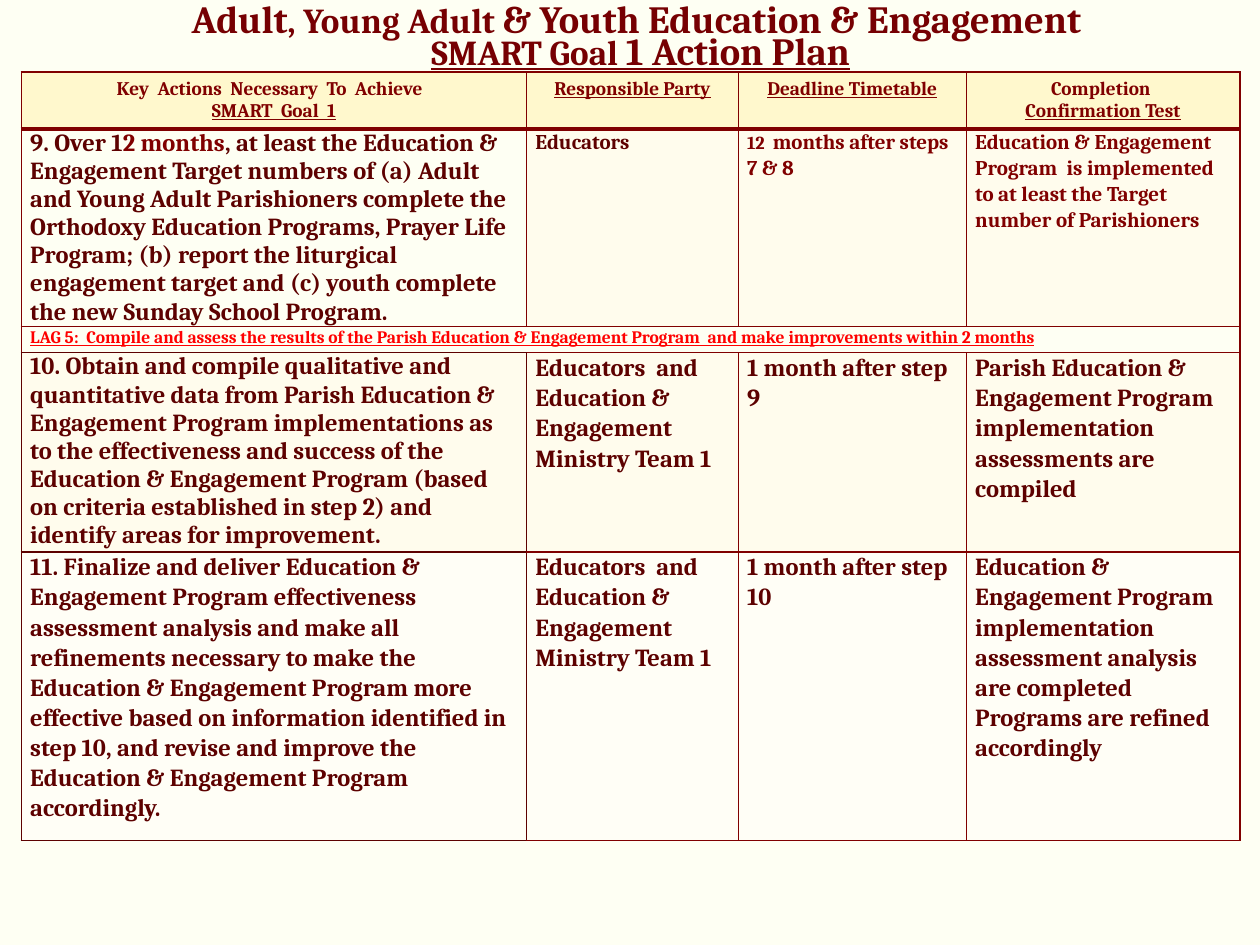
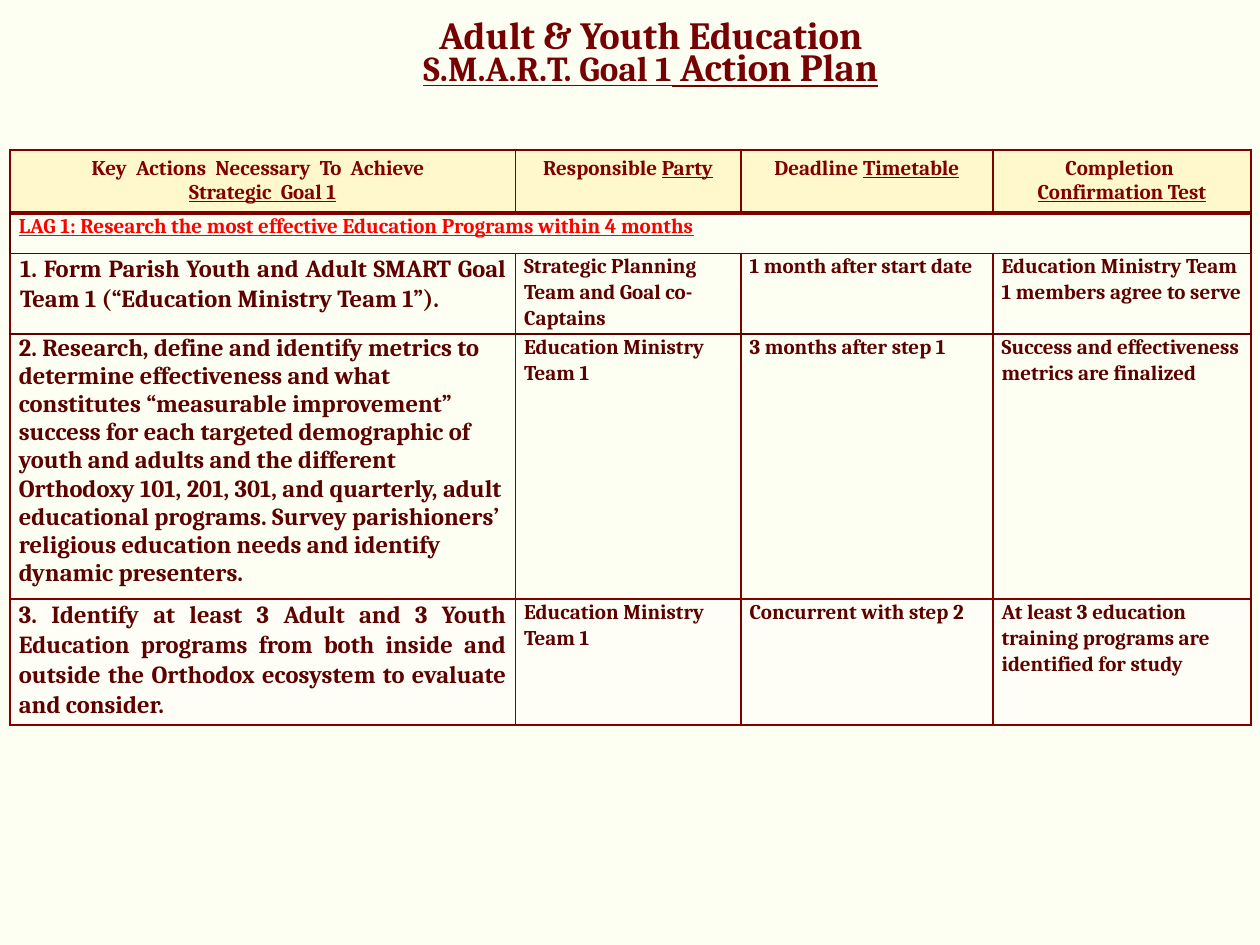
"""Build two SMART goal action plan slides with tables."""
from typing import NamedTuple

from pptx import Presentation
from pptx.dml.color import RGBColor
from pptx.enum.text import MSO_ANCHOR as Anchor, PP_ALIGN as Align
from pptx.oxml import parse_xml
from pptx.oxml.ns import nsdecls
from pptx.util import Inches, Pt

WIDTH, HEIGHT = Inches(10), Inches(7.5)
FONT = "Cambria"
IVORY = RGBColor(0xFE, 0xFF, 0xF3)
GOLD = RGBColor(0xFF, 0xF8, 0xCD)
CREAM = RGBColor(0xFF, 0xFC, 0xED)
PALE = RGBColor(0xFF, 0xFE, 0xF6)
MAROON = RGBColor(0x80, 0x00, 0x00)
DARK = RGBColor(0x5D, 0x01, 0x00)
WINE = RGBColor(0x76, 0x00, 0x02)
RED = RGBColor(0xFF, 0x00, 0x00)


class Run(NamedTuple):
    text: str
    size: float | None = None
    color: RGBColor | None = None
    underline: bool = False


class Cell(NamedTuple):
    paragraphs: list[str | list[Run]]
    size: float = 14
    color: RGBColor = DARK
    fill: RGBColor | None = None
    spacing: float | None = 1.07
    align: Align = Align.LEFT
    indent: float = 0
    padded: bool = False


class Row(NamedTuple):
    height: float
    cells: list[Cell]
    dark_edges: tuple[str, ...] = ("",) * 4
    bottom_width: float = 1


class Box(NamedTuple):
    left: float
    top: float
    width: float
    height: float


class Plan(NamedTuple):
    title_box: Box
    title: list[list[Run]]
    table_box: Box
    columns: list[float]
    rows: list[Row]


def across(percent: float) -> int:
    """Turn a percentage of the slide width into a length."""
    return round(WIDTH * percent / 100)


def down(percent: float) -> int:
    """Turn a percentage of the slide height into a length."""
    return round(HEIGHT * percent / 100)


def place(box: Box) -> tuple[int, int, int, int]:
    """Turn a box of percentages into lengths."""
    return across(box.left), down(box.top), across(box.width), down(box.height)


def marked(text: str) -> list[Run]:
    """Split text into runs, underlining what stands between underscores."""
    return [Run(part, underline=i % 2 == 1)
            for i, part in enumerate(text.split("_")) if part]


def style(p, size: float, color: RGBColor, align: Align, spacing: float | None) -> None:
    """Set the shared look of a paragraph."""
    p.alignment = align
    if spacing:
        p.line_spacing = spacing
    p.font.name, p.font.bold, p.font.size = FONT, True, Pt(size)
    p.font.color.rgb = color


def add_runs(p, runs: list[Run]) -> None:
    """Add runs with the settings that differ from the paragraph."""
    for run in runs:
        r = p.add_run()
        r.text = run.text
        if run.size:
            r.font.size = Pt(run.size)
        if run.color:
            r.font.color.rgb = run.color
        if run.underline:
            r.font.underline = True


def set_borders(cell, dark_edges: str, bottom_width: float) -> None:
    """Draw the four edges of a table cell."""
    tc_pr = cell._tc.get_or_add_tcPr()
    for i, edge in enumerate("LRTB"):
        width = Pt(bottom_width if edge == "B" else 1)
        color = DARK if edge in dark_edges else MAROON
        tc_pr.insert(i, parse_xml(
            f'<a:ln{edge} {nsdecls("a")} w="{width}"><a:solidFill>'
            f'<a:srgbClr val="{color}"/></a:solidFill></a:ln{edge}>'))


def fill_cell(cell, content: Cell) -> None:
    """Write and colour one table cell."""
    if not content.padded:
        cell.margin_left = Inches(0.07 + content.indent)
        cell.margin_right = Inches(0.07)
        cell.margin_top = cell.margin_bottom = 0
    if content.fill:
        cell.fill.solid()
        cell.fill.fore_color.rgb = content.fill
    else:
        cell.fill.background()
    tf = cell.text_frame
    for i, text in enumerate(content.paragraphs):
        p = tf.add_paragraph() if i else tf.paragraphs[0]
        style(p, content.size, content.color, content.align, content.spacing)
        add_runs(p, marked(text) if isinstance(text, str) else text)


def add_plan_table(s, plan: Plan) -> None:
    """Draw the action table; a row with one cell spans all columns."""
    frame = s.shapes.add_table(len(plan.rows), len(plan.columns), *place(plan.table_box))
    table = frame.table
    table.first_row = table.horz_banding = False
    for column, width in zip(table.columns, plan.columns):
        column.width = across(width)
    for i, row in enumerate(plan.rows):
        table.rows[i].height = down(row.height)
        blanks = [Cell([""], size=row.cells[0].size)] * (len(plan.columns) - len(row.cells))
        for j, content in enumerate(row.cells + blanks):
            cell = table.cell(i, j)
            fill_cell(cell, content)
            set_borders(cell, row.dark_edges[j], row.bottom_width)
        if blanks:
            table.cell(i, 0).merge(table.cell(i, len(plan.columns) - 1))
    frame.height = down(plan.table_box.height)


def add_title(s, plan: Plan) -> None:
    """Write the two-line title."""
    tf = s.shapes.add_textbox(*place(plan.title_box)).text_frame
    tf.word_wrap = True
    tf.vertical_anchor = Anchor.MIDDLE
    p = tf.paragraphs[0]
    style(p, 22, WINE, Align.CENTER, 0.7)
    for i, line in enumerate(plan.title):
        if i:
            p.add_line_break()
        add_runs(p, line)


def header(height: float, size: float, *titles: list[str]) -> Row:
    """Make the heading row."""
    return Row(height, [Cell(t, size, MAROON, GOLD, None, Align.CENTER, padded=True)
                        for t in titles], bottom_width=3)


def lag(height: float, size: float, text: str, dark_edges: str) -> Row:
    """Make a full-width milestone row."""
    return Row(height, [Cell([f"_{text}_"], size, RED)], (dark_edges,) * 4)


def details(*texts: str, size: float = 12, fill: RGBColor | None = None) -> list[Cell]:
    """Make the party, deadline and test cells; a line feed starts a paragraph."""
    return [Cell(text.split("\n"), size, fill=fill) for text in texts]


KEY_ACTIONS = "Key  Actions  Necessary  To  Achieve  "
COMPLETION = ["Completion ", "_Confirmation Test_"]
TEAM = "Education Ministry Team 1"
ENGAGEMENT_TEAM = "Educators  and Education & Engagement Ministry Team 1"
STEP_EDGES = ("LRTB", "L", "", "")

PLANS = [
    Plan(
        Box(1.7, -3.47, 98.3, 15.33),
        [[Run("Adult"), Run(", Young Adult ", 20), Run("& Youth Education & Engagement ")],
         [Run("SMART Goal ", 20, underline=True), Run("1 Action Plan", underline=True)]],
        Box(1.7, 7.6, 96.7, 95.6),
        [40.1, 16.8, 18.1, 21.7],
        [
            header(4.27, 11, [KEY_ACTIONS, "_SMART  Goal  1_"], ["_Responsible Party_"],
                   ["_Deadline Timetable_"], COMPLETION),
            Row(10.8, [
                Cell([[Run("9. Over 1"), Run("2 months", color=MAROON),
                       Run(", at least the Education & Engagement Target numbers of (a) "
                           "Adult and Young Adult Parishioners complete the Orthodoxy "
                           "Education Programs, Prayer Life Program; (b) report the "
                           "liturgical engagement target and (c) youth complete the new "
                           "Sunday School Program.")]], spacing=None),
                Cell(["Educators"], 12, fill=CREAM),
                Cell([[Run("12  ", 10.5), Run("months after steps 7 & 8")]], 12, MAROON, CREAM),
                Cell(["Education & Engagement Program  is implemented to at least the "
                      "Target number of Parishioners"], 12, MAROON, CREAM),
            ]),
            lag(2.8, 10, "LAG 5:  Compile and assess the results of the Parish Education & "
                "Engagement Program  and make improvements within 2 months", "B"),
            Row(21.07, [
                Cell(["10. Obtain and compile qualitative and quantitative data from Parish "
                      "Education & Engagement Program implementations as to the effectiveness "
                      "and success of the Education & Engagement Program (based on criteria "
                      "established in step 2) and identify areas for improvement."],
                     fill=CREAM, spacing=None),
                *details(ENGAGEMENT_TEAM, "1 month after step 9",
                         "Parish Education & Engagement Program\n"
                         "implementation  assessments are compiled", size=14, fill=CREAM),
            ], STEP_EDGES),
            Row(30.53, [
                Cell(["11. Finalize and deliver Education & Engagement Program effectiveness "
                      "assessment analysis and make all refinements necessary to make the "
                      "Education & Engagement Program more effective based on information "
                      "identified in step 10, and revise and improve the Education & "
                      "Engagement Program accordingly."], fill=PALE),
                *details(ENGAGEMENT_TEAM, "1 month after step 10",
                         "Education & Engagement Program\n"
                         "implementation  assessment analysis are completed Programs are "
                         "refined accordingly", size=14, fill=PALE),
            ], STEP_EDGES),
        ],
    ),
    Plan(
        Box(2.5, -2.4, 98.3, 16.67),
        [[Run("Adult & Youth Education")],
         [Run("S.M.A.R.T. Goal 1", 20, underline=True), Run(" Action Plan", underline=True)]],
        Box(0.8, 15.87, 98.4, 68.27),
        [40.1, 17.9, 20, 20.5],
        [
            header(6.4, 12, [KEY_ACTIONS, "_Strategic  Goal 1_"], ["Responsible _Party_"],
                   ["Deadline _Timetable_"], COMPLETION),
            lag(4.27, 12, "LAG 1: Research the most effective Education Programs within "
                "4 months", "LRB"),
            Row(6.93, [
                Cell(["1. Form Parish Youth and Adult SMART Goal Team 1 "
                      "(“Education Ministry Team 1”). "], align=Align.JUSTIFY, indent=0.01),
                *details("Strategic Planning Team and Goal co-Captains",
                         "1 month after start date",
                         "Education Ministry Team 1 members agree to serve"),
            ], ("TB",) * 4),
            Row(8.8, [
                Cell(["2. Research, define and identify metrics to determine effectiveness "
                      "and what constitutes “measurable improvement” success for each "
                      "targeted demographic of youth and adults and the different Orthodoxy "
                      "101, 201, 301, and quarterly, adult educational programs. Survey "
                      "parishioners’ religious education needs and identify dynamic "
                      "presenters."], spacing=None),
                *details(TEAM, "3 months after step 1",
                         "Success and effectiveness metrics are finalized"),
            ], ("T",) * 4),
            Row(13.33, [
                Cell(["3. Identify at least 3 Adult and 3 Youth Education programs from both "
                      "inside and outside the Orthodox ecosystem to evaluate and consider."],
                     fill=PALE, align=Align.JUSTIFY),
                *details(TEAM, "Concurrent with step 2",
                         "At least 3 education training programs are identified for study",
                         fill=PALE),
            ]),
        ],
    ),
]


def main() -> None:
    """Build and save the presentation."""
    prs = Presentation()
    prs.slide_width, prs.slide_height = WIDTH, HEIGHT
    for plan in PLANS:
        s = prs.slides.add_slide(prs.slide_layouts[6])
        s.background.fill.solid()
        s.background.fill.fore_color.rgb = IVORY
        add_plan_table(s, plan)
        add_title(s, plan)
    prs.save("out.pptx")


if __name__ == "__main__":
    main()
